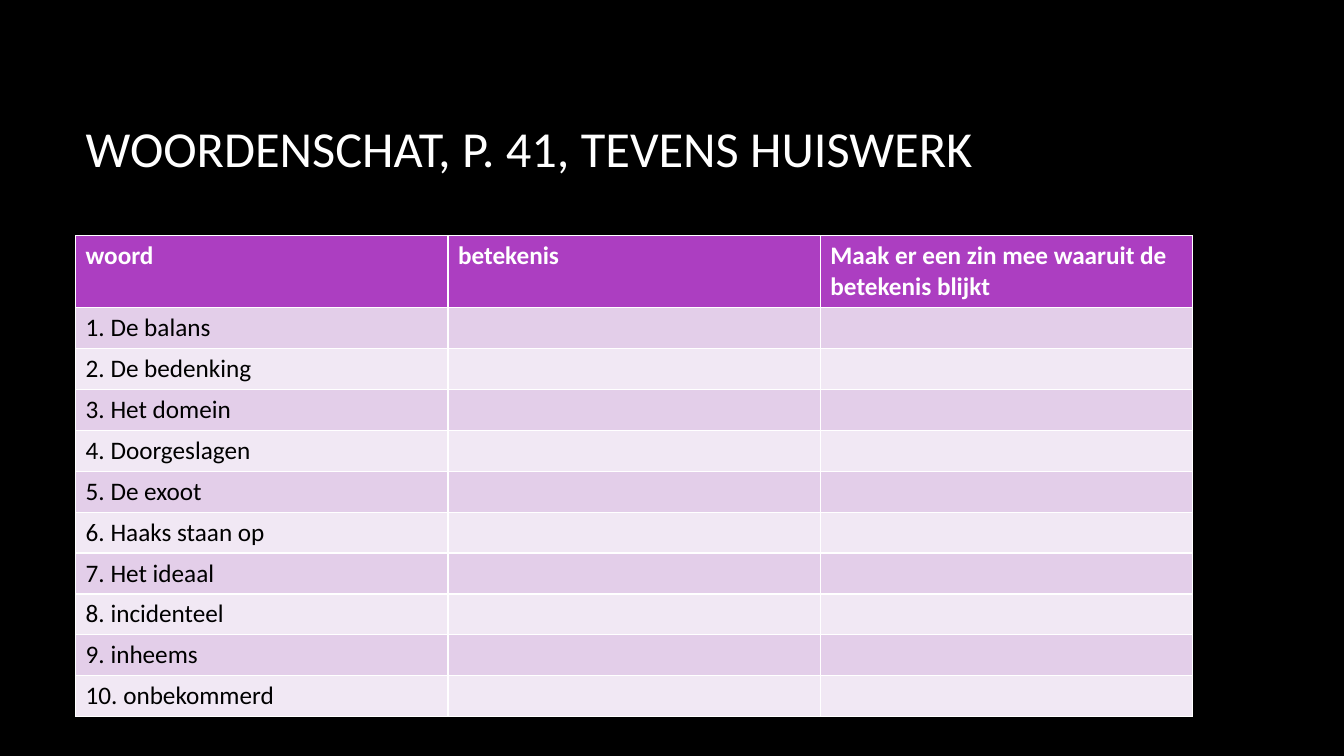
"""Build a Dutch vocabulary homework slide with a word table."""
from pptx import Presentation
from pptx.dml.color import RGBColor
from pptx.enum.text import MSO_ANCHOR, PP_ALIGN
from pptx.util import Inches, Pt

BLACK = RGBColor(0x00, 0x00, 0x00)
WHITE = RGBColor(0xFF, 0xFF, 0xFF)
PURPLE = RGBColor(0xAC, 0x3E, 0xC1)
LILAC = RGBColor(0xE3, 0xCE, 0xE9)
PALE = RGBColor(0xF1, 0xE8, 0xF4)

HEADERS = ["woord", "betekenis", "Maak er een zin mee waaruit de betekenis blijkt"]
WORDS = ["De balans", "De bedenking", "Het domein", "Doorgeslagen", "De exoot",
         "Haaks staan op", "Het ideaal", "incidenteel", "inheems", "onbekommerd"]


class VocabularySlide:
    font = "Calibri"
    left = Inches(0.75)
    width = Inches(11.08)

    def __init__(self, prs):
        self.s = prs.slides.add_slide(prs.slide_layouts[5])
        fill = self.s.background.fill
        fill.solid()
        fill.fore_color.rgb = BLACK

    def style(self, p, size, color, bold=False):
        for r in p.runs:
            r.font.name = self.font
            r.font.size = Pt(size)
            r.font.color.rgb = color
            r.font.bold = bold

    def title(self, text):
        sp = self.s.shapes.title
        sp.left, sp.top = self.left, Inches(0.67)
        sp.width, sp.height = self.width, Inches(1.59)
        tf = sp.text_frame
        tf.text = text
        tf.word_wrap = True
        tf.vertical_anchor = MSO_ANCHOR.MIDDLE
        p = tf.paragraphs[0]
        p.alignment = PP_ALIGN.LEFT
        self.style(p, 36, WHITE)

    def cell(self, cell, text, fill, color, bold):
        cell.fill.solid()
        cell.fill.fore_color.rgb = fill
        cell.text_frame.text = text
        self.style(cell.text_frame.paragraphs[0], 18, color, bold)

    def table(self, headers, words):
        rows = [headers] + [[f"{n}. {word}", "", ""] for n, word in enumerate(words, 1)]
        header_height, body_height = Inches(0.7), Inches(4.06)
        table = self.s.shapes.add_table(
            len(rows), len(headers), self.left, Inches(2.34),
            self.width, header_height + body_height).table
        for i, row in enumerate(rows):
            header = i == 0
            table.rows[i].height = header_height if header else body_height // len(words)
            fill = PURPLE if header else LILAC if i % 2 else PALE
            for j, text in enumerate(row):
                self.cell(table.cell(i, j), text, fill, WHITE if header else BLACK, header)


def main():
    prs = Presentation()
    prs.slide_width, prs.slide_height = Inches(13.33), Inches(7.5)
    slide = VocabularySlide(prs)
    slide.title("WOORDENSCHAT, P. 41, TEVENS HUISWERK")
    slide.table(HEADERS, WORDS)
    prs.save("out.pptx")


if __name__ == "__main__":
    main()
